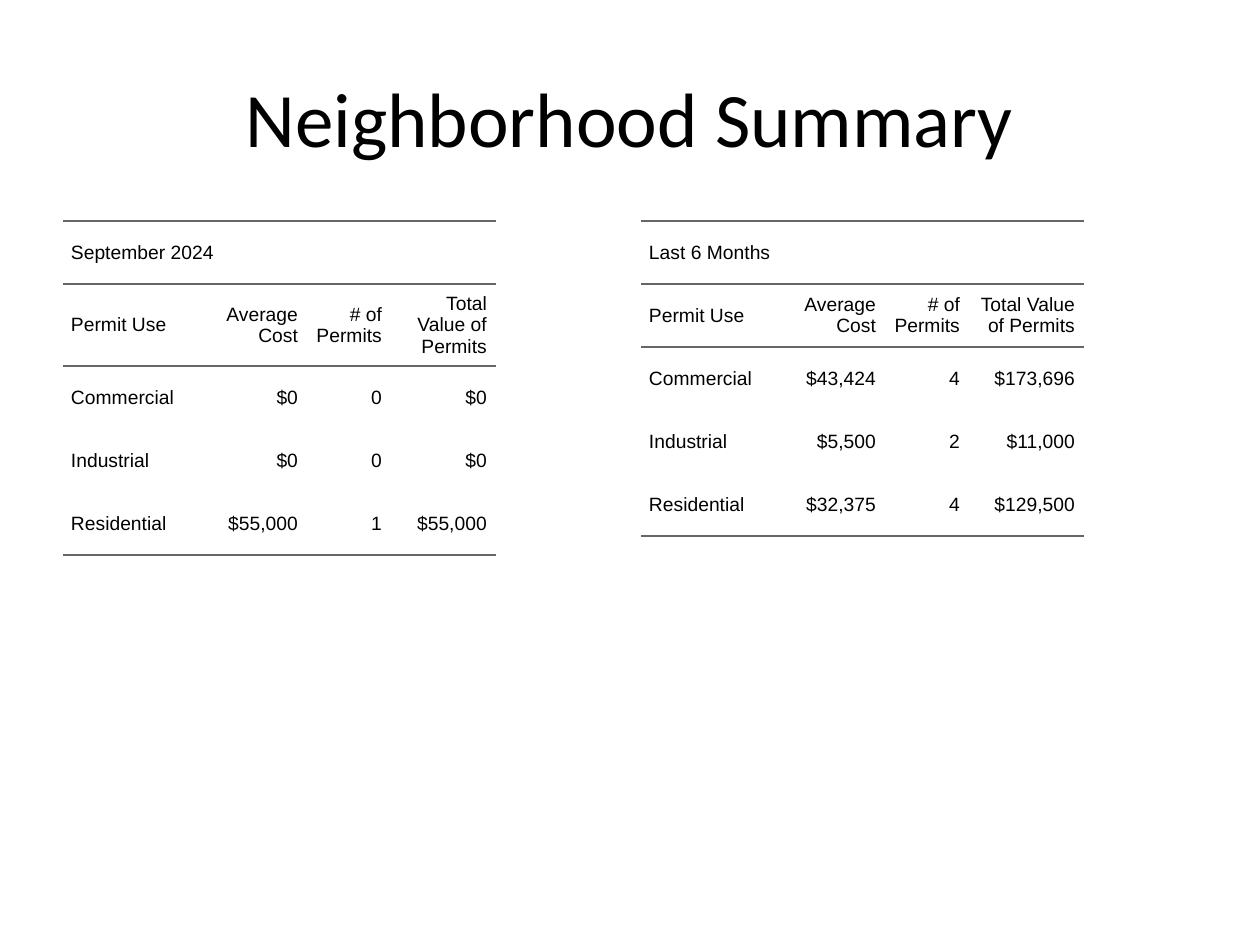
from dataclasses import dataclass

from lxml.etree import SubElement
from pptx import Presentation
from pptx.dml.color import RGBColor
from pptx.enum.text import MSO_ANCHOR as Anchor, PP_ALIGN as Align
from pptx.oxml.ns import qn
from pptx.util import Emu, Pt

PX_PER_INCH = 126
PLAIN_TABLE_STYLE = "{2D5ABB26-0587-4C30-8999-92F81FD0307C}"


@dataclass(frozen=True)
class Theme:
    ink: str = "000000"
    rule: str = "666666"
    rule_width: float = 1.5
    title_font: str = "Calibri"
    title_size: int = 44
    table_font: str = "Arial"
    table_size: int = 11
    paragraph_gap: int = 5
    cell_pad: int = 9
    left_indent: int = 8
    right_indent: int = 9


THEME = Theme()
ROW_HEIGHT = 63
HEADINGS = ("Permit Use", "Average Cost", "# of Permits", "Total Value of Permits")

SEPTEMBER = (
    ("Commercial", "$0", "0", "$0"),
    ("Industrial", "$0", "0", "$0"),
    ("Residential", "$55,000", "1", "$55,000"),
)
SIX_MONTHS = (
    ("Commercial", "$43,424", "4", "$173,696"),
    ("Industrial", "$5,500", "2", "$11,000"),
    ("Residential", "$32,375", "4", "$129,500"),
)


def px(length):
    return Emu(round(length * 914400 / PX_PER_INCH))


def style_text(paragraph, font_name, size, align):
    paragraph.alignment = align
    font = paragraph.font
    font.name, font.size = font_name, Pt(size)
    font.color.rgb = RGBColor.from_string(THEME.ink)


def add_title(slide, box, wording):
    title = slide.shapes.title
    title.left, title.top, title.width, title.height = map(px, box)
    title.text_frame.text = wording
    title.text_frame.vertical_anchor = Anchor.MIDDLE
    style_text(title.text_frame.paragraphs[0], THEME.title_font,
               THEME.title_size, Align.CENTER)


def rule_cell(cell, sides):
    """Draw the given sides; hide the others. Lines precede the fill."""
    properties = cell._tc.get_or_add_tcPr()
    for position, side in enumerate(("lnL", "lnR", "lnT", "lnB")):
        line = SubElement(properties, qn(f"a:{side}"))
        properties.insert(position, line)
        if side in sides:
            line.set("w", str(Pt(THEME.rule_width)))
            fill = SubElement(line, qn("a:solidFill"))
            SubElement(fill, qn("a:srgbClr")).set("val", THEME.rule)
        else:
            line.set("w", "0")
            SubElement(line, qn("a:noFill"))


def fill_cell(cell, wording, align, sides):
    cell.text = wording
    cell.vertical_anchor = Anchor.MIDDLE
    cell.margin_left = cell.margin_right = 0
    cell.margin_top = cell.margin_bottom = px(THEME.cell_pad)
    cell.fill.background()
    paragraph = cell.text_frame.paragraphs[0]
    style_text(paragraph, THEME.table_font, THEME.table_size, align)
    paragraph.space_before = paragraph.space_after = Pt(THEME.paragraph_gap)
    indents = paragraph._p.get_or_add_pPr()
    indents.set("marL", str(px(THEME.left_indent)))
    indents.set("marR", str(px(THEME.right_indent)))
    indents.set("indent", "0")
    rule_cell(cell, sides)


def add_permit_table(slide, left, top, column_widths, period, permits):
    rows = ((period, "", "", ""), HEADINGS, *permits)
    frame = slide.shapes.add_table(
        len(rows), len(HEADINGS), px(left), px(top),
        px(sum(column_widths)), px(ROW_HEIGHT * len(rows)))
    table = frame.table
    table.first_row = table.horz_banding = False
    table._tbl.tblPr.find(qn("a:tableStyleId")).text = PLAIN_TABLE_STYLE

    for column, width in zip(table.columns, column_widths):
        column.width = px(width)
    for row in table.rows:
        row.height = px(ROW_HEIGHT)

    # Rules frame the period and the headings, and close the last row
    last = len(rows) - 1
    for r, row in enumerate(rows):
        sides = {"lnT"} if r <= 2 else set()
        if r in (0, 1, last):
            sides.add("lnB")
        for c, wording in enumerate(row):
            align = Align.RIGHT if c else Align.LEFT
            fill_cell(table.cell(r, c), wording, align, sides)
    table.cell(0, 0).merge(table.cell(0, len(HEADINGS) - 1))


def main():
    deck = Presentation()
    deck.slide_width, deck.slide_height = px(1260), px(945)
    slide = deck.slides.add_slide(deck.slide_layouts[5])

    # Monthly figures on the left, half-year figures on the right
    add_permit_table(slide, 63, 221, (138, 106, 84, 105),
                     "September 2024", SEPTEMBER)
    add_permit_table(slide, 641, 221, (138, 106, 84, 115),
                     "Last 6 Months", SIX_MONTHS)
    add_title(slide, (63, 38, 1134, 157), "Neighborhood Summary")

    deck.save("out.pptx")


if __name__ == "__main__":
    main()
